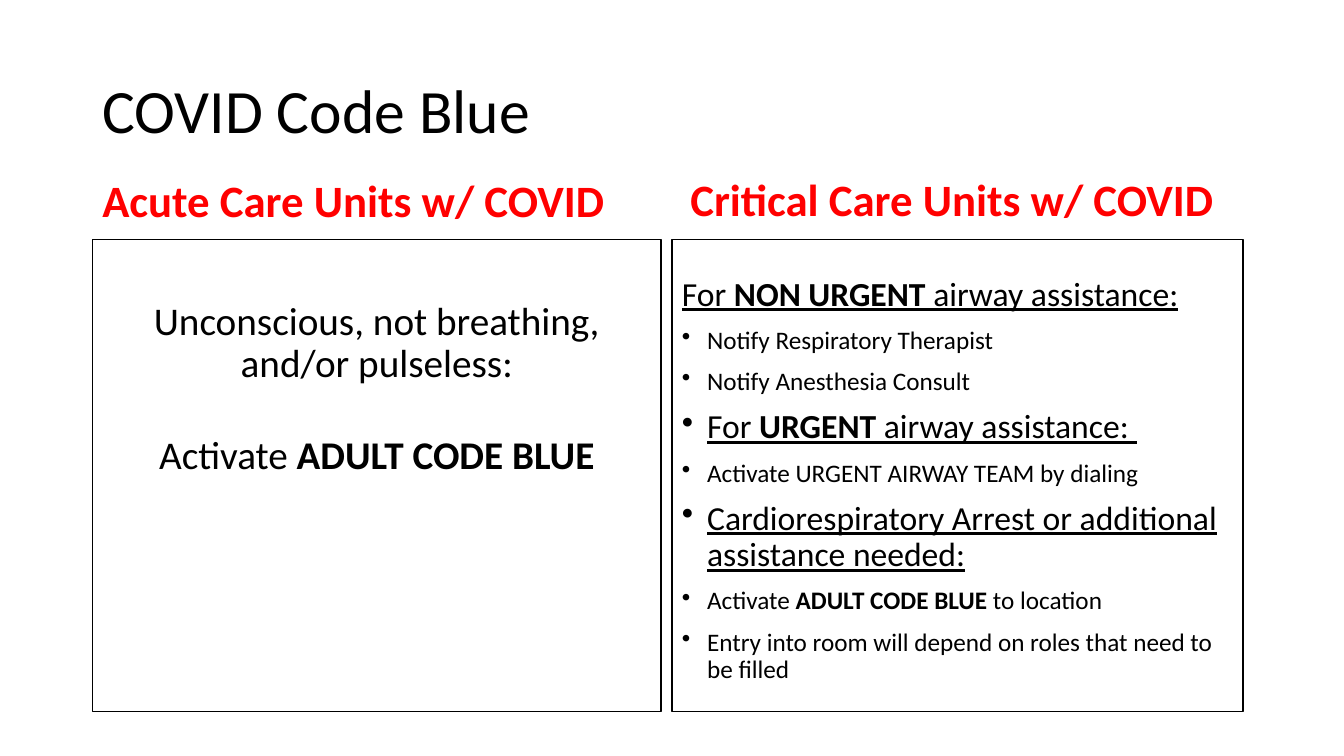
"""Build the COVID Code Blue slide: two headed panels of response steps."""
import pptx
import pptx.dml.color
import pptx.enum.shapes
import pptx.enum.text
import pptx.util
import lxml.etree

presentation = pptx.Presentation()
presentation.slide_width = pptx.util.Inches(13.33)
presentation.slide_height = pptx.util.Inches(7.5)
slide = presentation.slides.add_slide(presentation.slide_layouts[6])
column = presentation.slide_width / 160
row = presentation.slide_height / 90
alignments = pptx.enum.text.PP_ALIGN
anchors = pptx.enum.text.MSO_ANCHOR


def color(hex_code):
    return pptx.dml.color.RGBColor.from_string(hex_code)


def add_paragraph(frame, runs, size, ink="000000", underline=False, before=0, align=alignments.LEFT):
    """Fill the first paragraph or append one; every second run is bold."""
    paragraph = frame.paragraphs[0]
    if paragraph.runs:
        paragraph = frame.add_paragraph()
    paragraph.alignment = align
    paragraph.line_spacing = 0.9
    paragraph.space_before = pptx.util.Pt(before)
    paragraph.font.name = "Calibri"
    paragraph.font.size = pptx.util.Pt(size)
    paragraph.font.color.rgb = color(ink)
    for index, text in enumerate(runs):
        if text:
            run = paragraph.add_run()
            run.text = text
            run.font.name = "Calibri"
            run.font.size = pptx.util.Pt(size)
            run.font.color.rgb = color(ink)
            run.font.bold = index % 2 == 1
            run.font.underline = underline
    return paragraph


headings = [
    (11, 4.8, 138, 17.4, anchors.MIDDLE, ["COVID Code Blue"], 44, "000000"),
    (11, 16.8, 67.7, 10.8, anchors.BOTTOM, ["", "Acute Care Units w/ COVID"], 32, "FF0000"),
    (81, 17.3, 68, 10.2, anchors.BOTTOM, ["", "Critical Care Units w/ COVID"], 32, "FF0000"),
]
for left, top, width, height, anchor, runs, size, ink in headings:
    box = slide.shapes.add_textbox(
        int(left * column), int(top * row), int(width * column), int(height * row))
    box.text_frame.word_wrap = True
    box.text_frame.vertical_anchor = anchor
    add_paragraph(box.text_frame, runs, size, ink)

panel_frames = []
for left, width, top_inset in [(11, 67.7, 7.4), (80, 68, 4.5)]:
    panel = slide.shapes.add_shape(
        pptx.enum.shapes.MSO_SHAPE.RECTANGLE,
        int(left * column), int(28.5 * row), int(width * column), int(56.2 * row))
    panel.shadow.inherit = False
    panel.fill.solid()
    panel.fill.fore_color.rgb = color("FFFFFF")
    panel.line.color.rgb = color("000000")
    panel.line.width = pptx.util.Pt(1)
    frame = panel.text_frame
    frame.word_wrap = True
    frame.vertical_anchor = anchors.TOP
    frame.margin_top = int(top_inset * row)
    panel_frames.append(frame)
acute, critical = panel_frames

add_paragraph(acute, ["Unconscious, not breathing, and/or pulseless:"], 28, align=alignments.CENTER)
add_paragraph(acute, ["Activate ", "ADULT CODE BLUE"], 28, before=35, align=alignments.CENTER)

add_paragraph(critical, ["For ", "NON URGENT ", "airway assistance:"], 24, underline=True)
steps = [
    (["Notify Respiratory Therapist"], False),
    (["Notify Anesthesia Consult"], False),
    (["For ", "URGENT", " airway assistance: "], True),
    (["Activate URGENT AIRWAY TEAM by dialing"], False),
    (["Cardiorespiratory Arrest or additional assistance needed:"], True),
    (["Activate ", "ADULT CODE BLUE ", "to location"], False),
    (["Entry into room will depend on roles that need to be filled"], False),
]
for runs, is_heading in steps:
    paragraph = add_paragraph(
        critical, runs, 24 if is_heading else 18, underline=is_heading, before=10)
    properties = paragraph._p.get_or_add_pPr()
    indent = pptx.util.Inches(0.25)
    properties.set("marL", str(indent))
    properties.set("indent", str(-indent))
    bullet = lxml.etree.Element(pptx.oxml.ns.qn("a:buChar"), char="•")
    properties.find(pptx.oxml.ns.qn("a:defRPr")).addprevious(bullet)

presentation.save("out.pptx")
